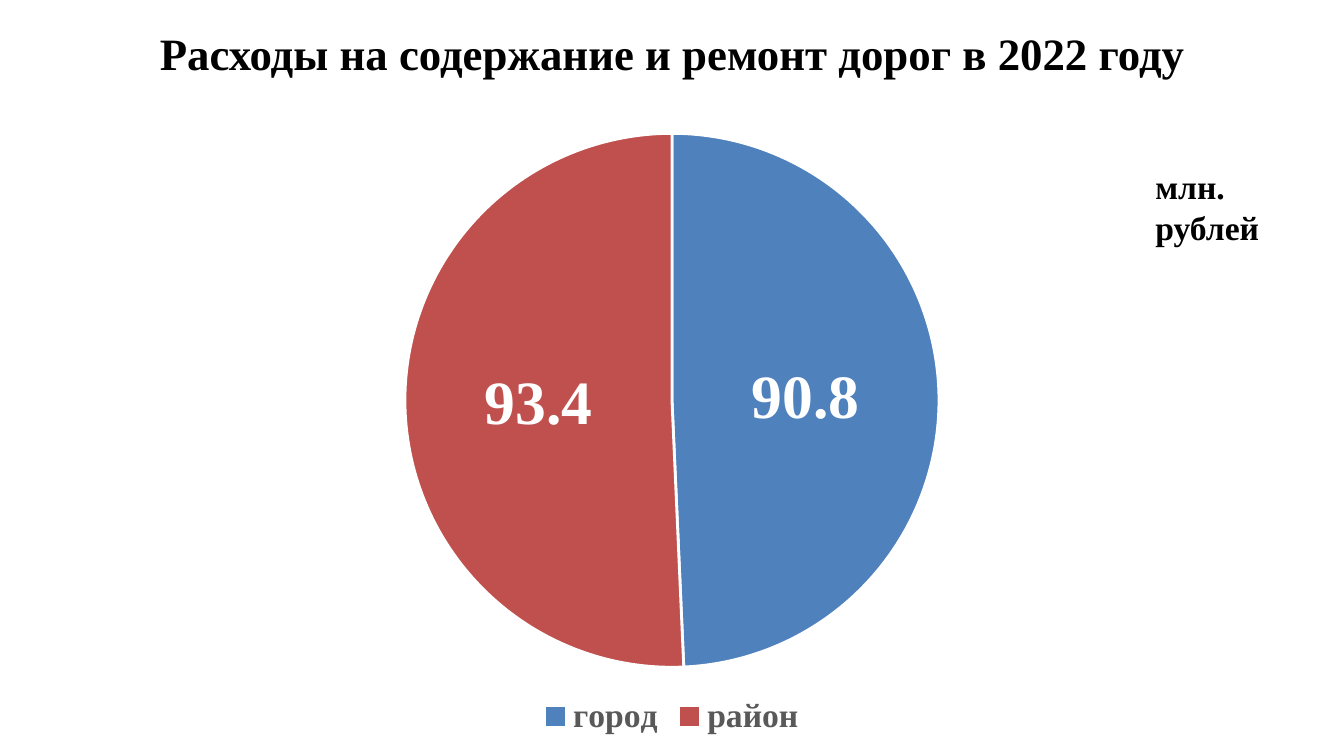
from lxml import etree
from pptx import Presentation
from pptx.chart.data import CategoryChartData
from pptx.dml.color import RGBColor
from pptx.enum.chart import XL_CHART_TYPE as CT, XL_LABEL_POSITION as LP, XL_LEGEND_POSITION as LG
from pptx.enum.text import MSO_ANCHOR as MA, PP_ALIGN as PA
from pptx.oxml.ns import qn
from pptx.util import Inches, Pt


def rgb(value):
    return RGBColor.from_string(value)


class Deck:
    face = "Times New Roman"

    def __init__(self, width, height):
        self.prs = Presentation()
        self.prs.slide_width, self.prs.slide_height = Inches(width), Inches(height)
        self.s = self.prs.slides.add_slide(self.prs.slide_layouts[6])

    def font(self, font, size, color="000000", bold=True, name=face):
        for key, value in {"name": name, "size": Pt(size), "bold": bold}.items():
            setattr(font, key, value)
        font.color.rgb = rgb(color)

    def text(self, box, words, size, align=PA.LEFT, anchor=MA.TOP, pad=(0.1, 0.05)):
        tf = self.s.shapes.add_textbox(*map(Inches, box)).text_frame
        side, edge = map(Inches, pad)
        frame = {"word_wrap": True, "vertical_anchor": anchor,
                 "margin_left": side, "margin_right": side,
                 "margin_top": edge, "margin_bottom": edge}
        for key, value in frame.items():
            setattr(tf, key, value)
        p = tf.paragraphs[0]
        p.alignment = align
        r = p.add_run()
        r.text = words
        self.font(r.font, size)

    def pie(self, box, values, colors, area):
        data = CategoryChartData(number_format="0.0")
        data.categories = list(values)
        data.add_series("Series 1", list(values.values()))
        chart = self.s.shapes.add_chart(CT.PIE, *map(Inches, box), data).chart
        chart.has_title = False
        self.font(chart.font, 10, bold=False, name="Calibri")
        chart.has_legend = True
        chart.legend.position = LG.BOTTOM
        chart.legend.include_in_layout = False
        self.font(chart.legend.font, 24, "595959")
        plot = chart.plots[0]
        plot.vary_by_categories = True
        for i, color in enumerate(colors):
            fmt = plot.series[0].points[i].format
            fmt.fill.solid()
            fmt.fill.fore_color.rgb = rgb(color)
            fmt.line.color.rgb = rgb("FFFFFF")
            fmt.line.width = Pt(2)
        labels = plot.series[0].data_labels
        for key, value in {"show_value": True, "show_percentage": False,
                           "position": LP.CENTER, "number_format": "0.0",
                           "number_format_is_linked": False}.items():
            setattr(labels, key, value)
        self.font(labels.font, 44, "FFFFFF")
        self.place_plot(chart, area)

    def place_plot(self, chart, area):
        plot_area = chart.plots[0]._element.getparent()
        for old in plot_area.findall(qn("c:layout")):
            plot_area.remove(old)
        layout = etree.Element(qn("c:layout"))
        plot_area.insert(0, layout)
        manual = etree.SubElement(layout, qn("c:manualLayout"))
        modes = {"layoutTarget": "inner", "xMode": "edge", "yMode": "edge"}
        for tag, value in {**modes, **dict(zip("xywh", area))}.items():
            etree.SubElement(manual, qn(f"c:{tag}")).set("val", str(value))


def main():
    deck = Deck(13.33, 7.5)
    deck.text((0.67, 0, 12, 1.05), "Расходы на содержание и ремонт дорог в 2022 году", 32,
              PA.CENTER, MA.MIDDLE, (0.12, 0.06))
    deck.pie((2.22, 1.2, 8.89, 6.16), {"город": 90.8, "район": 93.4},
             ("4F81BD", "C0504D"), (0.2, 0.02, 0.6, 0.86))
    deck.text((11.36, 1.6, 1.71, 0.91), "млн. рублей", 24)
    deck.prs.save("out.pptx")


if __name__ == "__main__":
    main()
